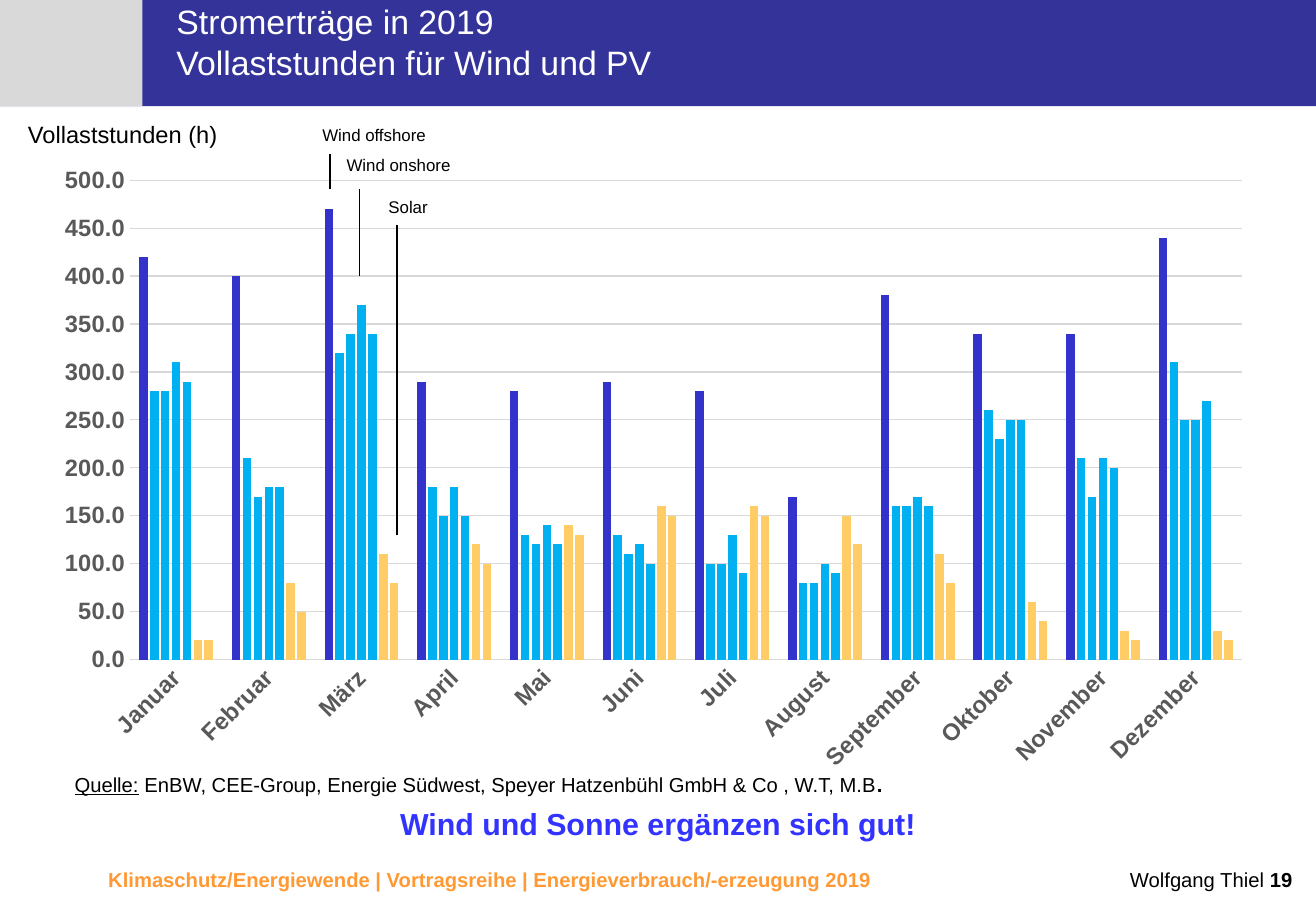
from lxml import etree
from pptx import Presentation
from pptx.chart.data import CategoryChartData
from pptx.dml.color import RGBColor
from pptx.enum.chart import XL_CHART_TYPE, XL_TICK_MARK
from pptx.enum.shapes import MSO_CONNECTOR, MSO_SHAPE
from pptx.enum.text import PP_ALIGN
from pptx.oxml.ns import qn
from pptx.util import Pt

COLUMNS = XL_CHART_TYPE.COLUMN_CLUSTERED
NO_TICK = XL_TICK_MARK.NONE
STRAIGHT = MSO_CONNECTOR.STRAIGHT
RECT = MSO_SHAPE.RECTANGLE
LEFT, CENTER, RIGHT = PP_ALIGN.LEFT, PP_ALIGN.CENTER, PP_ALIGN.RIGHT

FONT = "Arial"
HEADER_HEIGHT = 62.9
COLORS = {
    "header": "333399", "grey": "D9D9D9", "white": "FFFFFF", "black": "000000",
    "footer": "FF9933", "message": "3333FF", "axis": "595959",
    "offshore": "3333CC", "onshore": "00B0F0", "solar": "FFCC66",
}
MONTHS = ["Januar", "Februar", "März", "April", "Mai", "Juni", "Juli",
          "August", "September", "Oktober", "November", "Dezember"]
# Series name, colour, full-load hours per month
SERIES = [
    ("Wind offshore", "offshore", [420, 400, 470, 290, 280, 290, 280, 170, 380, 340, 340, 440]),
    ("Wind onshore 1", "onshore", [280, 210, 320, 180, 130, 130, 100, 80, 160, 260, 210, 310]),
    ("Wind onshore 2", "onshore", [280, 170, 340, 150, 120, 110, 100, 80, 160, 230, 170, 250]),
    ("Wind onshore 3", "onshore", [310, 180, 370, 180, 140, 120, 130, 100, 170, 250, 210, 250]),
    ("Wind onshore 4", "onshore", [290, 180, 340, 150, 120, 100, 90, 90, 160, 250, 200, 270]),
    ("Solar 1", "solar", [20, 80, 110, 120, 140, 160, 160, 150, 110, 60, 30, 30]),
    ("Solar 2", "solar", [20, 50, 80, 100, 130, 150, 150, 120, 80, 40, 20, 20]),
]
# Label, its left, top and width, then the x, bottom and top of its line
CALLOUTS = [
    ("Wind offshore", 184, 70.6, 76.3, 195.8, 112.3, 91.4),
    ("Wind onshore", 198.4, 88.3, 79.2, 213.1, 163.4, 112.3),
    ("Solar", 223.2, 113, 38.2, 235.4, 317.2, 133.2),
]


def rgb(name):
    return RGBColor.from_string(COLORS[name])


def points(*lengths):
    return [Pt(length) for length in lengths]


def style_font(font, size, color, bold=False):
    font.name = FONT
    font.size = Pt(size)
    font.bold = bold
    font.color.rgb = rgb(color)


def add_rect(s, box, color):
    sp = s.shapes.add_shape(RECT, *points(*box))
    sp.shadow.inherit = False
    sp.fill.solid()
    sp.fill.fore_color.rgb = rgb(color)
    sp.line.fill.background()


def add_text(s, box, text, size, color="black", bold=False, align=LEFT,
             inset=None, wrap=True, spacing=None):
    sp = s.shapes.add_textbox(*points(*box))
    tf = sp.text_frame
    tf.word_wrap = wrap
    if inset is not None:
        tf.margin_left = tf.margin_top = Pt(inset)
        tf.margin_right = tf.margin_bottom = Pt(inset)
    p = tf.paragraphs[0]
    p.text = text
    p.alignment = align
    if spacing:
        p.line_spacing = spacing
    for r in p.runs:
        style_font(r.font, size, color, bold)
    return p


def append_run(p, text, size, bold=False):
    r = p.add_run()
    r.text = text
    style_font(r.font, size, "black", bold)


def add_line(s, x, bottom, top):
    line = s.shapes.add_connector(STRAIGHT, *points(x, bottom, x, top))
    line.line.width = Pt(1)
    line.line.color.rgb = rgb("black")
    etree.SubElement(line._element.spPr, qn("a:effectLst"))


def add_grey_line(line):
    line.color.rgb = rgb("grey")
    line.width = Pt(0.75)


def add_hours_chart(s, box):
    data = CategoryChartData(number_format="#,##0.0")
    data.categories = MONTHS
    for name, _, hours in SERIES:
        data.add_series(name, hours)
    chart = s.shapes.add_chart(COLUMNS, *points(*box), data).chart
    chart.has_legend = False
    chart.has_title = False
    style_font(chart.font, 10, "black")

    plot = chart.plots[0]
    plot.gap_width = 219
    plot.overlap = -27
    plot.vary_by_categories = False
    for series, (_, color, _) in zip(plot.series, SERIES):
        series.format.fill.solid()
        series.format.fill.fore_color.rgb = rgb(color)

    months, hours = chart.category_axis, chart.value_axis
    for axis in (months, hours):
        axis.major_tick_mark = axis.minor_tick_mark = NO_TICK
        style_font(axis.tick_labels.font, 14, "axis", bold=True)
    add_grey_line(months.format.line)
    # Slanted month names
    body = months._element.find(qn("c:txPr")).find(qn("a:bodyPr"))
    body.set("rot", "-2700000")
    body.set("vert", "horz")

    hours.minimum_scale, hours.maximum_scale, hours.major_unit = 0, 500, 50
    hours.tick_labels.number_format = "#,##0.0"
    hours.tick_labels.number_format_is_linked = False
    hours.format.line.fill.background()
    add_grey_line(hours.major_gridlines.format.line)


def main():
    prs = Presentation()
    prs.slide_width, prs.slide_height = points(780, 540)
    s = prs.slides.add_slide(prs.slide_layouts[6])

    # Header
    add_rect(s, (0, 0, 780, HEADER_HEIGHT), "header")
    add_rect(s, (0, 0, 84.4, HEADER_HEIGHT), "grey")
    add_text(s, (104.6, 0.7, 587.5, 48.2),
             "Stromerträge in 2019\nVollaststunden für Wind und PV",
             20, "white", inset=0)

    # Footer
    add_text(s, (57.1, 510.5, 475.2, 21.6),
             "Klimaschutz/Energiewende | Vortragsreihe | Energieverbrauch/-erzeugung 2019",
             12, "footer", bold=True)
    p = add_text(s, (576.5, 511.9, 196.6, 20.2), "Wolfgang Thiel ", 12,
                 align=RIGHT, spacing=0.9)
    append_run(p, "19", 12, bold=True)

    # Source and message
    p = add_text(s, (44.2, 457.9, 483.1, 14.4), "Quelle:", 12, inset=0, wrap=False)
    p.runs[0].font.underline = True
    append_run(p, " ", 12, bold=True)
    append_run(p, "EnBW, CEE-Group, Energie Südwest, "
                  "Speyer Hatzenbühl GmbH & Co , W.T, M.B", 12)
    append_run(p, ".", 12, bold=True)
    add_text(s, (0, 472.3, 780, 31.7), "Wind und Sonne ergänzen sich gut!",
             18, "message", bold=True, align=CENTER, inset=5)

    # Chart with its axis title and callouts
    add_text(s, (9.5, 67.4, 127.4, 24.5), "Vollaststunden (h)", 14, wrap=False)
    add_hours_chart(s, (23.9, 91.5, 726.8, 373))
    for label, left, top, width, x, line_bottom, line_top in CALLOUTS:
        add_line(s, x, line_bottom, line_top)
        add_text(s, (left, top, width, 19.4), label, 10, wrap=False)

    prs.save("out.pptx")


if __name__ == "__main__":
    main()
